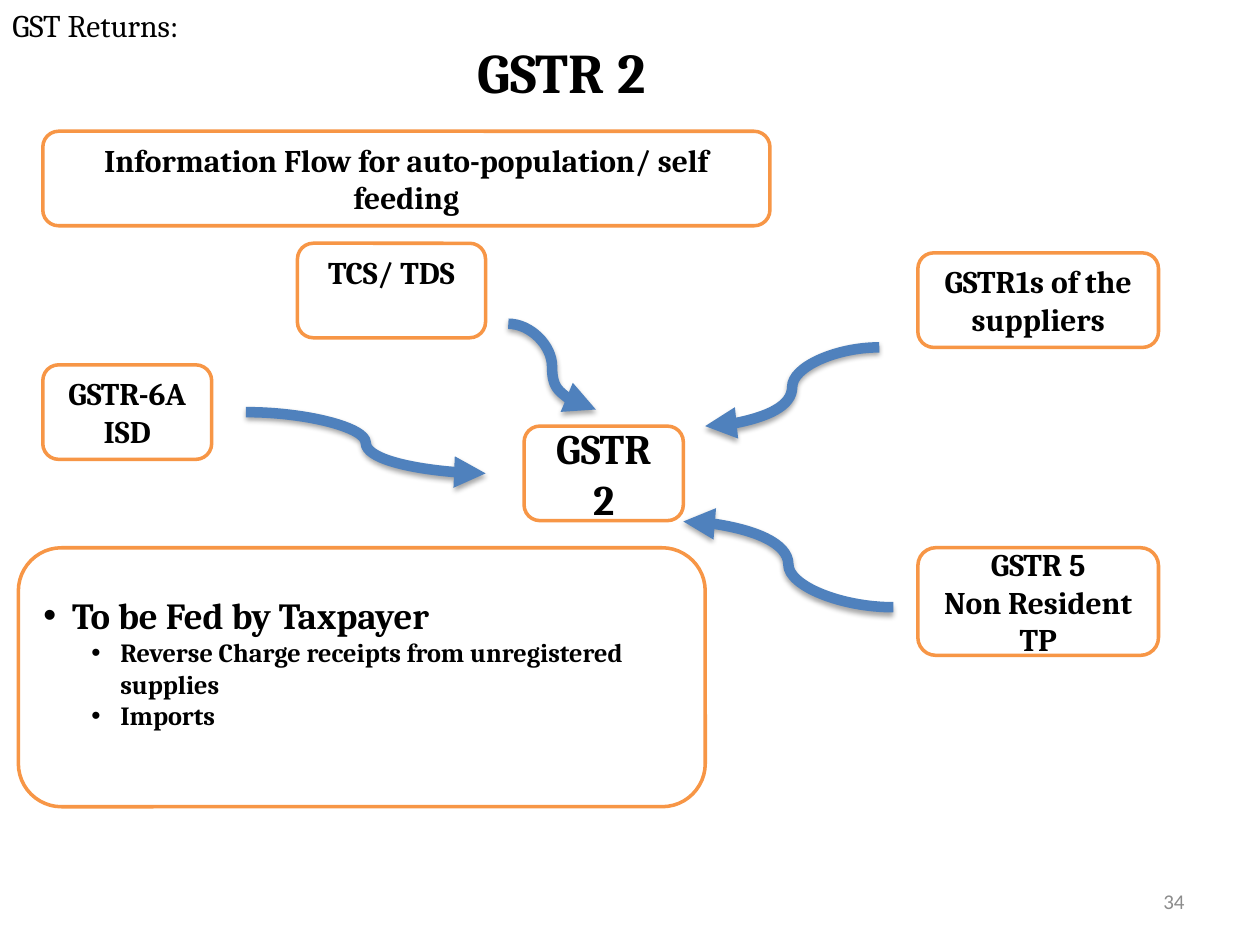
import pptx
import pptx.dml.color
import pptx.enum.shapes
import pptx.enum.text
import pptx.oxml
import pptx.oxml.ns
import pptx.util
from dataclasses import dataclass

Pt = pptx.util.Pt
RGB = pptx.dml.color.RGBColor
Align = pptx.enum.text.PP_ALIGN
Anchor = pptx.enum.text.MSO_ANCHOR
qn = pptx.oxml.ns.qn
NAMESPACE = pptx.oxml.ns.nsdecls("a")


@dataclass(frozen=True)
class Theme:
    ink: RGB = RGB(0, 0, 0)
    paper: RGB = RGB(255, 255, 255)
    border: RGB = RGB(0xF7, 0x96, 0x46)
    arrow: RGB = RGB(0x4F, 0x81, 0xBD)
    muted: RGB = RGB(0x8C, 0x8C, 0x8C)
    font: str = "Cambria"
    number_font: str = "Calibri"
    title: int = 32
    hub: int = 24
    heading: int = 21
    body: int = 18
    detail: int = 15
    number: int = 12


theme = Theme()


def write(paragraph, text, size, bold=True, align=Align.CENTER,
          color=theme.ink, font=theme.font):
    paragraph.text = text
    paragraph.alignment = align
    paragraph.font.name = font
    paragraph.font.size = Pt(size)
    paragraph.font.bold = bold
    paragraph.font.color.rgb = color


def add_box(left, top, width, height):
    shape = slide.shapes.add_shape(
        pptx.enum.shapes.MSO_SHAPE.ROUNDED_RECTANGLE,
        Pt(left), Pt(top), Pt(width), Pt(height))
    shape.shadow.inherit = False
    shape.fill.solid()
    shape.fill.fore_color.rgb = theme.paper
    shape.line.color.rgb = theme.border
    shape.line.width = Pt(2)
    shape.text_frame.word_wrap = True
    shape.text_frame.vertical_anchor = Anchor.MIDDLE
    return shape


presentation = pptx.Presentation()
presentation.slide_width = Pt(720)
presentation.slide_height = Pt(540)
slide = presentation.slides.add_slide(presentation.slide_layouts[5])

# Title
title = slide.shapes.title
title.left, title.top, title.width, title.height = Pt(84), Pt(18), Pt(474), Pt(46)
title.text_frame.auto_size = pptx.enum.text.MSO_AUTO_SIZE.NONE
title.text_frame.vertical_anchor = Anchor.TOP
write(title.text_frame.paragraphs[0], "GSTR 2", theme.title)

# Boxes: lines, left, top, width, height, type size, bottom inset
boxes = [
    (["GSTR 2"], 299.5, 243.5, 91, 54, theme.hub, 3.6),
    (["Information Flow for auto-population/ self feeding"],
     24.5, 75, 415.5, 54, theme.body, 3.6),
    (["GSTR1s of the suppliers"], 524.5, 144.5, 137.5, 54, theme.body, 3.6),
    (["GSTR-6A", "ISD"], 24.5, 208.5, 96.5, 54, theme.body, 3.6),
    (["GSTR 5", "Non Resident TP"], 524.5, 313, 137.5, 61.5, theme.body, 3.6),
    (["TCS/ TDS"], 170, 139, 107.5, 54, theme.body, 25),
]
for lines, left, top, width, height, size, bottom in boxes:
    frame = add_box(left, top, width, height).text_frame
    frame.margin_bottom = Pt(bottom)
    for index, line in enumerate(lines):
        paragraph = frame.add_paragraph() if index else frame.paragraphs[0]
        write(paragraph, line, size)

# Taxpayer input list
frame = add_box(10.5, 313, 392.5, 148).text_frame
frame.margin_bottom = Pt(21)
items = [
    ("To be Fed by Taxpayer", 0, theme.heading),
    ("Reverse Charge receipts from unregistered supplies", 1, theme.detail),
    ("Imports", 1, theme.detail),
]
for index, (text, level, size) in enumerate(items):
    paragraph = frame.add_paragraph() if index else frame.paragraphs[0]
    paragraph.level = level
    properties = paragraph._p.get_or_add_pPr()
    properties.set("marL", str(Pt(16.5 + 27.5 * level)))
    properties.set("indent", str(Pt(-16.5)))
    for markup in ('<a:buFont %s typeface="Arial"/>', '<a:buChar %s char="•"/>'):
        properties.append(pptx.oxml.parse_xml(markup % NAMESPACE))
    write(paragraph, text, size, align=Align.LEFT)

# Curved arrows into the GSTR 2 box: from x, y to x, y
arrows = [
    (502.5, 198.5, 403, 243.5),
    (140.5, 235.5, 277.5, 270.5),
    (510.5, 347, 390.5, 298),
    (290.5, 185, 340.5, 234),
]
for points in arrows:
    connector = slide.shapes.add_connector(
        pptx.enum.shapes.MSO_CONNECTOR.CURVE, *[Pt(value) for value in points])
    connector.line.color.rgb = theme.arrow
    connector.line.width = Pt(6)
    connector.line._get_or_add_ln().append(
        pptx.oxml.parse_xml('<a:tailEnd %s type="triangle"/>' % NAMESPACE))
    connector._element.find(qn("p:spPr")).append(pptx.oxml.parse_xml(
        f'<a:effectLst {NAMESPACE}><a:outerShdw blurRad="{Pt(3.1)}" '
        f'dist="{Pt(1.8)}" dir="5400000" rotWithShape="0">'
        f'<a:srgbClr val="{theme.ink}"><a:alpha val="35000"/></a:srgbClr>'
        '</a:outerShdw></a:effectLst>'))

# Section label and page number
number_box = slide.shapes.add_textbox(Pt(516), Pt(500.5), Pt(168), Pt(28.5))
number_box.text_frame.vertical_anchor = Anchor.MIDDLE
label_box = slide.shapes.add_textbox(Pt(0), Pt(0), Pt(180), Pt(29))
for box in (number_box, label_box):
    box.text_frame.word_wrap = True
write(number_box.text_frame.paragraphs[0], "34", theme.number, False,
      Align.RIGHT, theme.muted, theme.number_font)
write(label_box.text_frame.paragraphs[0], "GST Returns:", theme.body, False, Align.LEFT)

presentation.save("out.pptx")
